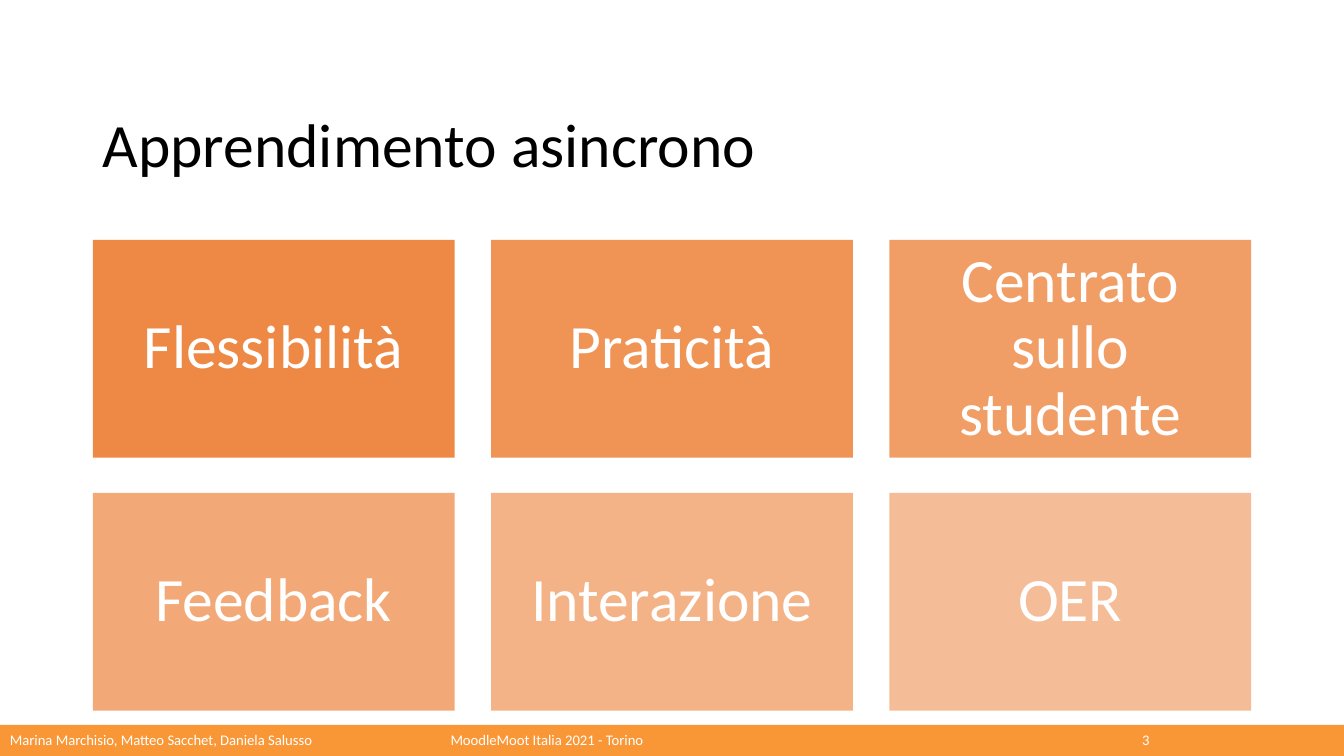
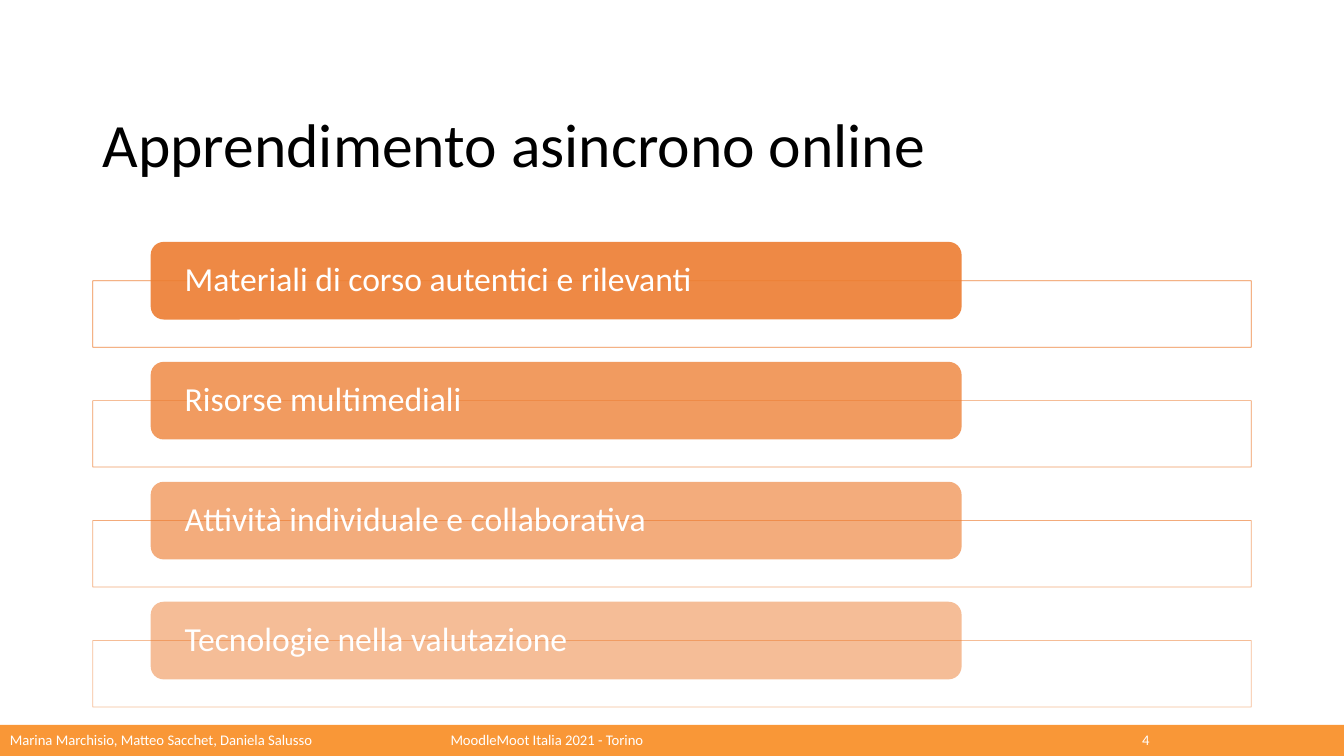
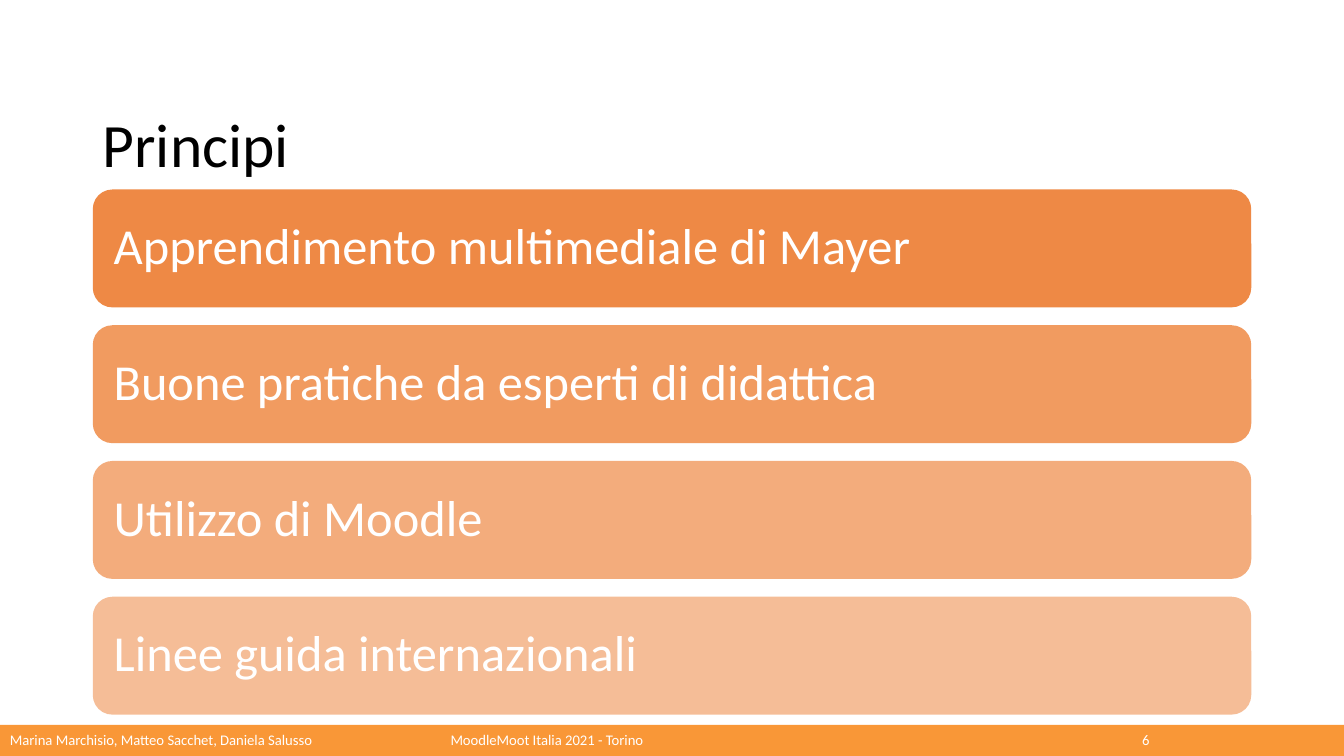
from pptx import Presentation
from pptx.dml.color import RGBColor
from pptx.enum.shapes import MSO_SHAPE as Preset
from pptx.enum.text import MSO_ANCHOR as Anchor, PP_ALIGN as Align
from pptx.oxml.ns import qn
from pptx.util import Inches, Pt

WIDTH, HEIGHT = 13.33, 7.5
MARGIN = 0.92
CONTENT_WIDTH = WIDTH - 2 * MARGIN
BAND_HEIGHT = 0.31
BAND_TOP = HEIGHT - BAND_HEIGHT
FONT = "Calibri"
WHITE, BLACK, ORANGE, BAND_ORANGE = "FFFFFF", "000000", "ED7D31", "F99737"
AUTHORS = "Marina Marchisio, Matteo Sacchet, Daniela Salusso"
EVENT = "MoodleMoot Italia 2021 - Torino"


def color(hex_code):
    """Turn a hex string into a colour."""
    return RGBColor.from_string(hex_code)


def fades(count):
    """Return opacities falling evenly from 90 to 50 percent."""
    return [90 - 40 * index / (count - 1) for index in range(count)]


def set_opacity(shape, fill_path, percent):
    """Make the solid fill found at a path below spPr partly transparent."""
    color_element = shape.element.spPr.xpath(f"{fill_path}/a:srgbClr")[0]
    alpha = color_element.makeelement(qn("a:alpha"), {"val": str(round(percent * 1000))})
    color_element.append(alpha)


def add_block(slide, preset, box, fill, opacity=100):
    """Add a filled shape without outline or shadow."""
    shape = slide.shapes.add_shape(preset, *map(Inches, box))
    shape.shadow.inherit = False
    shape.fill.solid()
    shape.fill.fore_color.rgb = color(fill)
    shape.line.fill.background()
    if opacity < 100:
        set_opacity(shape, "./a:solidFill", opacity)
    return shape


def write(shape, text, size, hex_code=WHITE, align=Align.LEFT, insets=(0.1, 0.05)):
    """Write one vertically centred paragraph into a shape."""
    frame = shape.text_frame
    frame.word_wrap = True
    frame.vertical_anchor = Anchor.MIDDLE
    frame.margin_left = frame.margin_right = Inches(insets[0])
    frame.margin_top = frame.margin_bottom = Inches(insets[1])
    frame.text = text
    paragraph = frame.paragraphs[0]
    paragraph.alignment = align
    paragraph.line_spacing = 0.9
    font = paragraph.runs[0].font
    font.name, font.size = FONT, Pt(size)
    font.color.rgb = color(hex_code)


def add_text(slide, box, text, size, hex_code=WHITE):
    """Add a text box."""
    write(slide.shapes.add_textbox(*map(Inches, box)), text, size, hex_code)


def add_slide(presentation, title, number):
    """Add a slide with the shared title and footer band."""
    slide = presentation.slides.add_slide(presentation.slide_layouts[6])
    add_block(slide, Preset.RECTANGLE, (0, BAND_TOP, WIDTH, BAND_HEIGHT), BAND_ORANGE)
    for left, width, text in ((0, 4.08, AUTHORS), (4.37, 4, EVENT), (11.23, 1, str(number))):
        add_text(slide, (left, BAND_TOP, width, BAND_HEIGHT), text, 10.5)
    add_text(slide, (MARGIN, 0.74, CONTENT_WIDTH, 1.45), title, 44, BLACK)
    return slide


def add_tiles(slide, labels, columns=3, top=2.38, height=2.16, gap=0.36):
    """Lay out labelled tiles in a grid."""
    width = (CONTENT_WIDTH - (columns - 1) * gap) / columns
    for index, (label, opacity) in enumerate(zip(labels, fades(len(labels)))):
        row, column = divmod(index, columns)
        box = (MARGIN + column * (width + gap), top + row * (height + gap - 0.01), width, height)
        tile = add_block(slide, Preset.RECTANGLE, box, ORANGE, opacity)
        write(tile, label, 44, align=Align.CENTER, insets=(0.18, 0.18))


def add_framed_bars(slide, labels, top=2.4, pitch=1.19, height=0.77):
    """Stack labelled bars, each overlapping an outlined frame."""
    for index, (label, opacity) in enumerate(zip(labels, fades(len(labels)))):
        bar_top = top + index * pitch
        frame_box = (MARGIN, bar_top + height / 2, CONTENT_WIDTH, 0.66)
        frame = add_block(slide, Preset.RECTANGLE, frame_box, WHITE, 90)
        frame.line.color.rgb = color(ORANGE)
        frame.line.width = Pt(0.5)
        set_opacity(frame, "./a:ln/a:solidFill", opacity)
        bar_box = (MARGIN + 0.05 * CONTENT_WIDTH, bar_top, 0.7 * CONTENT_WIDTH, height)
        bar = add_block(slide, Preset.ROUNDED_RECTANGLE, bar_box, ORANGE, opacity)
        write(bar, label, 24, insets=(0.3, 0))


def add_wide_bars(slide, labels, top=1.88, bottom=7.09, height=1.17):
    """Spread full-width labelled bars evenly between top and bottom."""
    pitch = (bottom - top - height) / (len(labels) - 1)
    for index, (label, opacity) in enumerate(zip(labels, fades(len(labels)))):
        box = (MARGIN, top + index * pitch, CONTENT_WIDTH, height)
        bar = add_block(slide, Preset.ROUNDED_RECTANGLE, box, ORANGE, opacity)
        write(bar, label, 36, insets=(0.15, 0.15))


def main():
    """Build and save the presentation."""
    presentation = Presentation()
    presentation.slide_width = Inches(WIDTH)
    presentation.slide_height = Inches(HEIGHT)

    add_tiles(add_slide(presentation, "Apprendimento asincrono", 3), (
        "Flessibilità", "Praticità", "Centrato sullo studente",
        "Feedback", "Interazione", "OER",
    ))
    add_framed_bars(add_slide(presentation, "Apprendimento asincrono online", 4), (
        "Materiali di corso autentici e rilevanti",
        "Risorse multimediali",
        "Attività individuale e collaborativa",
        "Tecnologie nella valutazione",
    ))
    add_wide_bars(add_slide(presentation, "Principi", 6), (
        "Apprendimento multimediale di Mayer",
        "Buone pratiche da esperti di didattica",
        "Utilizzo di Moodle",
        "Linee guida internazionali",
    ))
    presentation.save("out.pptx")


if __name__ == "__main__":
    main()
